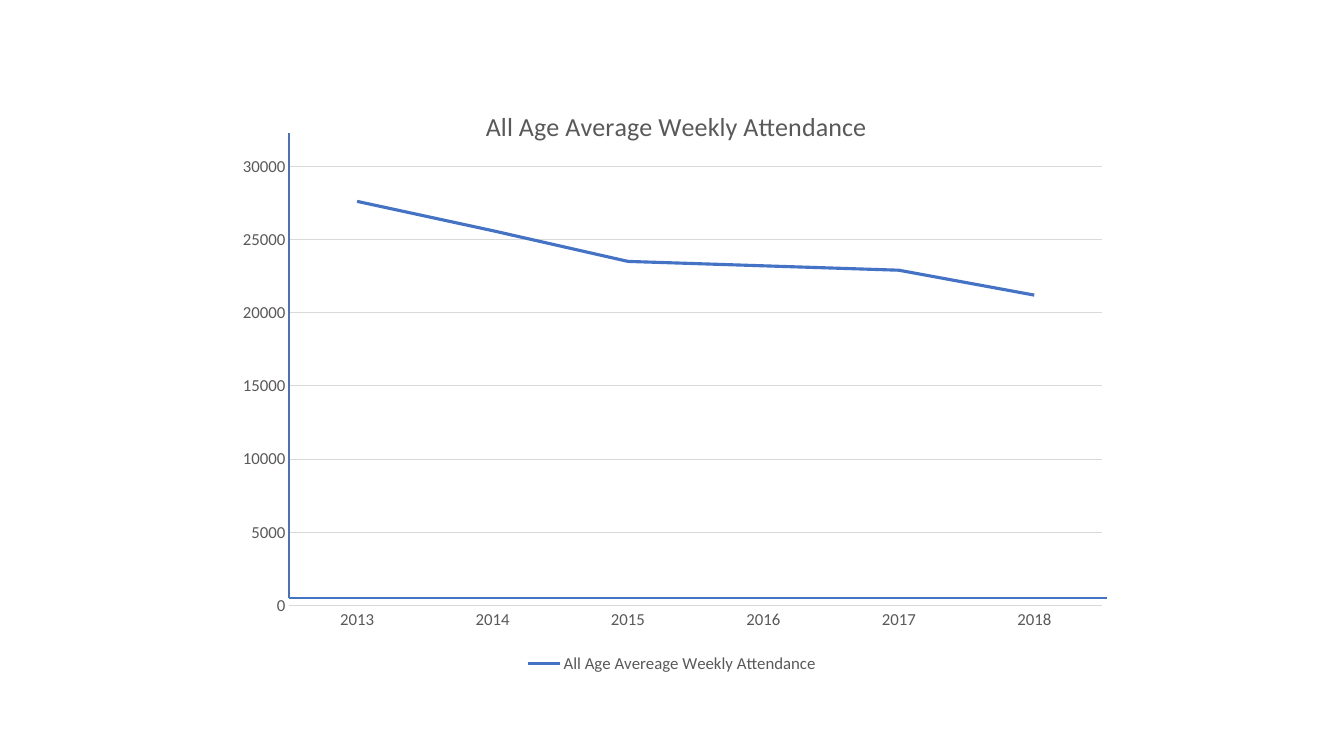
from dataclasses import dataclass

from pptx import Presentation
from pptx.chart.data import CategoryChartData
from pptx.dml.color import RGBColor
from pptx.enum.chart import XL_CHART_TYPE, XL_LEGEND_POSITION, XL_TICK_MARK
from pptx.enum.shapes import MSO_CONNECTOR
from pptx.oxml.ns import qn
from pptx.util import Inches, Pt
from lxml.etree import SubElement


@dataclass(frozen=True)
class Theme:
    """Colours, font and type sizes of the slide."""
    accent: str = "4472C4"
    text: str = "595959"
    grid: str = "D9D9D9"
    font: str = "Calibri"
    title_size: float = 18.6
    label_size: float = 12


THEME = Theme()
WIDTH, HEIGHT = Inches(13.33), Inches(7.5)
CHART_BOX = (1 / 6, 0.1053, 2 / 3, 0.7907)
PLOT_BOX = {"x": 0.073, "y": 0.145, "w": 0.907, "h": 0.735}
TITLE_SPOT = {"x": 0.287, "y": 0.04}
AXIS_LEFT, AXIS_RIGHT = 0.215, 0.8237
AXIS_TOP, AXIS_BOTTOM = 0.176, 0.7915
ATTENDANCE = {"2013": 27600, "2014": 25600, "2015": 23500,
              "2016": 23200, "2017": 22900, "2018": 21200}


def across(share):
    """Turn a share of the slide's width into a length."""
    return round(WIDTH * share)


def down(share):
    """Turn a share of the slide's height into a length."""
    return round(HEIGHT * share)


def style_line(line, color, width):
    """Give a line its colour and its width in points."""
    line.color.rgb = RGBColor.from_string(color)
    line.width = Pt(width)


def style_font(font, size=THEME.label_size, color=THEME.text):
    """Give a font the theme's face, a size and a colour."""
    font.name, font.size, font.bold = THEME.font, Pt(size), False
    font.color.rgb = RGBColor.from_string(color)


def place_part(part, index, shares, inner=False):
    """Fix a chart part at shares of the chart's size."""
    for old in part.findall(qn("c:layout")):
        part.remove(old)
    layout = SubElement(part, qn("c:layout"))
    part.insert(index, layout)
    manual = SubElement(layout, qn("c:manualLayout"))
    settings = {"layoutTarget": "inner"} if inner else {}
    settings.update(xMode="edge", yMode="edge", **shares)
    for name, value in settings.items():
        SubElement(manual, qn(f"c:{name}")).set("val", str(value))


def style_axis(axis):
    """Remove an axis's tick marks and style its labels."""
    axis.major_tick_mark = axis.minor_tick_mark = XL_TICK_MARK.NONE
    style_font(axis.tick_labels.font)


def add_title(chart, text):
    """Write the chart's title."""
    frame = chart.chart_title.text_frame
    span = frame.paragraphs[0].add_run()
    span.text = text
    style_font(span.font, THEME.title_size)
    place_part(chart.element.find(".//" + qn("c:title")), 1, TITLE_SPOT)


def add_attendance_chart(page):
    """Add the line chart of weekly attendance."""
    data = CategoryChartData()
    data.categories = list(ATTENDANCE)
    data.add_series("All Age Avereage Weekly Attendance", list(ATTENDANCE.values()))
    left, top, width, height = CHART_BOX
    chart = page.shapes.add_chart(
        XL_CHART_TYPE.LINE, across(left), down(top), across(width), down(height), data).chart
    style_font(chart.font)
    add_title(chart, "All Age Average Weekly Attendance")
    place_part(chart.element.find(".//" + qn("c:plotArea")), 0, PLOT_BOX, inner=True)

    years, counts = chart.category_axis, chart.value_axis
    style_axis(years)
    style_line(years.format.line, THEME.grid, 0.75)
    style_axis(counts)
    counts.format.line.fill.background()
    counts.minimum_scale, counts.maximum_scale, counts.major_unit = 0, 30000, 5000
    style_line(counts.major_gridlines.format.line, THEME.grid, 0.75)

    plot = chart.plots[0]
    plot.vary_by_categories = False
    series = plot.series[0]
    series.smooth = False
    style_line(series.format.line, THEME.accent, 2.25)

    chart.has_legend = True
    chart.legend.position = XL_LEGEND_POSITION.BOTTOM
    chart.legend.include_in_layout = False
    style_font(chart.legend.font)


def add_axis_line(page, start, end):
    """Draw a straight line between two points given as shares."""
    line = page.shapes.add_connector(
        MSO_CONNECTOR.STRAIGHT, across(start[0]), down(start[1]), across(end[0]), down(end[1]))
    style_line(line.line, THEME.accent, 1.5)
    SubElement(line.element.spPr, qn("a:effectLst"))


def main():
    """Build the attendance slide and save it."""
    deck = Presentation()
    deck.slide_width, deck.slide_height = WIDTH, HEIGHT
    page = deck.slides.add_slide(deck.slide_layouts[6])
    add_attendance_chart(page)
    corner = (AXIS_LEFT, AXIS_BOTTOM)
    add_axis_line(page, (AXIS_LEFT, AXIS_TOP), corner)
    add_axis_line(page, corner, (AXIS_RIGHT, AXIS_BOTTOM))
    deck.save("out.pptx")


if __name__ == "__main__":
    main()
